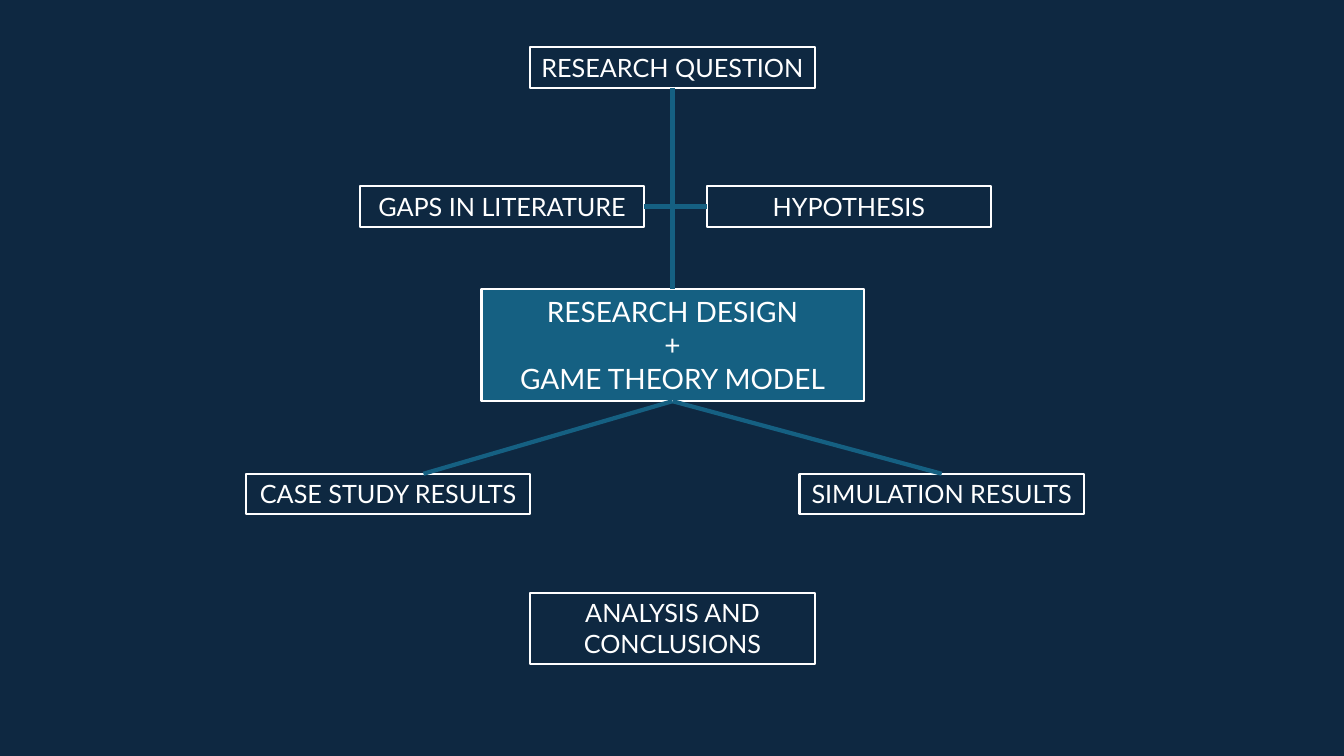
from pptx import Presentation
from pptx.dml.color import RGBColor
from pptx.enum.shapes import MSO_CONNECTOR
from pptx.enum.text import MSO_AUTO_SIZE, PP_ALIGN
from pptx.oxml.ns import qn
from pptx.util import Inches, Pt

STRAIGHT = MSO_CONNECTOR.STRAIGHT
CENTER = PP_ALIGN.CENTER
GROW = MSO_AUTO_SIZE.SHAPE_TO_FIT_TEXT
TOP, LEFT, BOTTOM, RIGHT = range(4)
NAVY, TEAL, WHITE = "0E2841", "156082", "FFFFFF"
BOX_WIDTH, BOX_HEIGHT = 2.82, 0.4
CENTER_X = 6.67


def color(value):
    """Return the colour for a hex string."""
    return RGBColor.from_string(value)


def add_step(page, text, left, top, width=BOX_WIDTH, height=BOX_HEIGHT, size=18, fill=None):
    """Add an outlined step with centred text."""
    step = page.shapes.add_textbox(Inches(left), Inches(top), Inches(width), Inches(height))
    if fill:
        step.fill.solid()
        step.fill.fore_color.rgb = color(fill)
    step.line.color.rgb = color(WHITE)
    step.line.width = Pt(1.5)
    frame = step.text_frame
    frame.word_wrap = True
    frame.auto_size = GROW
    frame.text = text
    for para in frame.paragraphs:
        para.alignment = CENTER
        for span in para.runs:
            span.font.name = "Lato"
            span.font.size = Pt(size)
            span.font.color.rgb = color(WHITE)
    return step


def add_link(page, start, end, source=None, target=None):
    """Draw a line between two points, joined to (step, side) pairs where given."""
    link = page.shapes.add_connector(STRAIGHT, *(Inches(value) for value in start + end))
    link.line.color.rgb = color(TEAL)
    link.line.width = Pt(3)
    properties = link._element.spPr
    properties.append(properties.makeelement(qn("a:effectLst"), {}))
    if source:
        link.begin_connect(*source)
    if target:
        link.end_connect(*target)


def add_foundation(page, top):
    """Place the question with the literature gaps and hypothesis below it."""
    row = top + 1.38
    middle = row + BOX_HEIGHT / 2
    question = add_step(page, "RESEARCH QUESTION", CENTER_X - BOX_WIDTH / 2, top)
    gaps = add_step(page, "GAPS IN LITERATURE", 3.57, row)
    hypothesis = add_step(page, "HYPOTHESIS", 7.01, row)
    add_link(page, (6.39, middle), (7.01, middle), (gaps, RIGHT), (hypothesis, LEFT))
    add_link(page, (CENTER_X, top + BOX_HEIGHT), (CENTER_X, middle), (question, BOTTOM))


def add_design(page, top, width=3.79, height=1.11):
    """Place the highlighted design step and the line leading down to it."""
    text = "RESEARCH DESIGN\n+\nGAME THEORY MODEL"
    design = add_step(page, text, CENTER_X - width / 2, top, width, height, 20, TEAL)
    add_link(page, (CENTER_X, top - 0.95), (CENTER_X, top), target=(design, TOP))
    return design


def add_outcomes(page, design, top):
    """Place both results, their lines from the design, and the conclusions."""
    add_step(page, "CASE STUDY RESULTS", 2.44, top)
    simulation = add_step(page, "SIMULATION RESULTS", 7.93, top)
    add_step(page, "ANALYSIS AND CONCLUSIONS", CENTER_X - BOX_WIDTH / 2, top + 1.18, height=0.71)
    fork = (CENTER_X, top - 0.72)
    add_link(page, fork, (4.2, top), (design, BOTTOM))
    add_link(page, fork, (9.33, top), (design, BOTTOM), (simulation, TOP))


def main():
    """Build the research outline slide."""
    deck = Presentation()
    deck.slide_width, deck.slide_height = Inches(13.33), Inches(7.5)
    page = deck.slides.add_slide(deck.slide_layouts[6])
    page.background.fill.solid()
    page.background.fill.fore_color.rgb = color(NAVY)
    add_foundation(page, 0.47)
    design = add_design(page, 2.87)
    add_outcomes(page, design, 4.7)
    deck.save("out.pptx")


if __name__ == "__main__":
    main()
